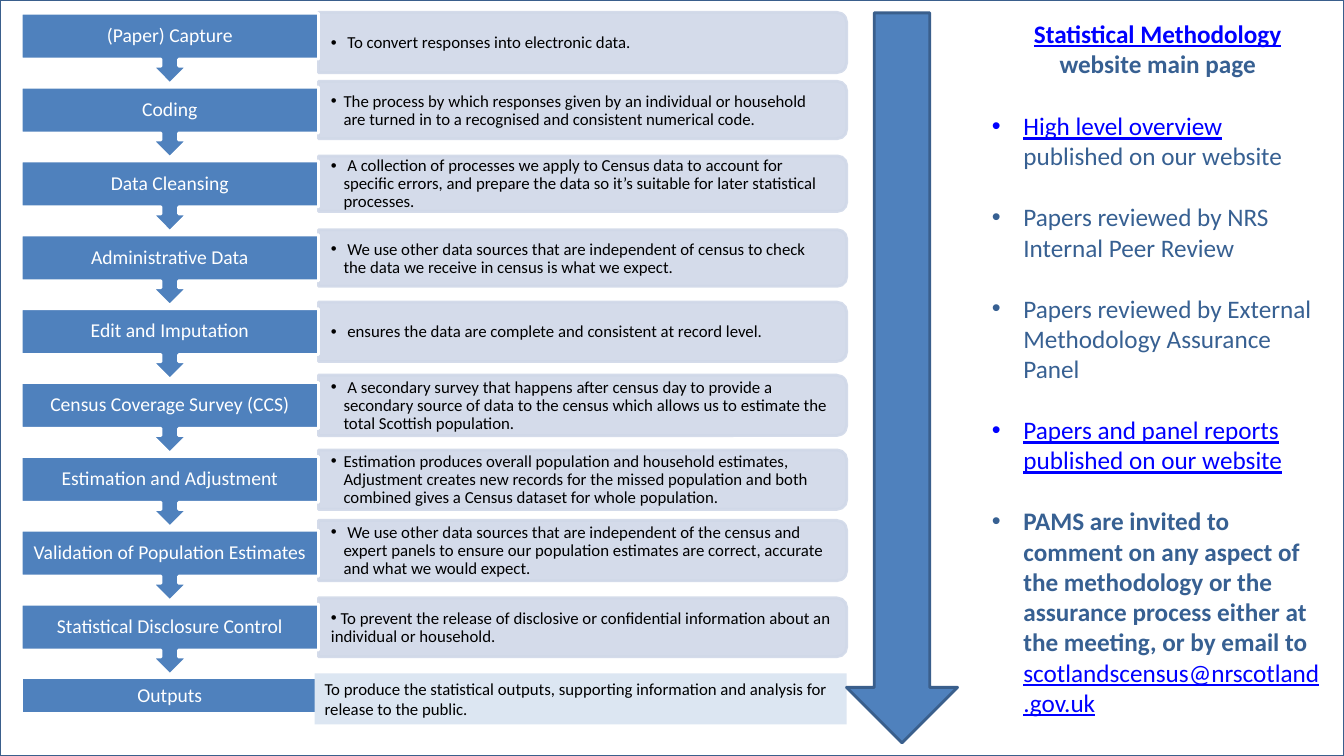
from lxml.etree import SubElement
from pptx import Presentation
from pptx.dml.color import RGBColor
from pptx.enum.shapes import MSO_SHAPE
from pptx.enum.text import MSO_ANCHOR, MSO_AUTO_SIZE, PP_ALIGN
from pptx.oxml.ns import qn
from pptx.util import Pt

BLUE, EDGE, PALE, WHITE = "4F81BD", "3A5F8C", "D0D8E8", "FFFFFF"
BLACK, NAVY, LINK = "000000", "376092", "0000FF"


def ink(fill, code):
    fill.solid()
    fill.fore_color.rgb = RGBColor.from_string(code)


def write(para, text, size, code, bold=False, under=False):
    run = para.add_run()
    run.text = text
    run.font.name = "Calibri"
    run.font.size = Pt(size)
    run.font.bold = bold
    run.font.underline = under
    ink(run.font.fill, code)


# name, panel middle, panel height, description
steps = [
    ("(Paper) Capture", 30.4, 43.2, " To convert responses into electronic data."),
    ("Coding", 78.6, 41, "The process by which responses given by an individual or household are turned in to a recognised and consistent numerical code."),
    ("Data Cleansing", 131.2, 39.6, " A collection of processes we apply to Census data to account for specific errors, and prepare the data so it’s suitable for later statistical processes."),
    ("Administrative Data", 184.3, 40.4, " We use other data sources that are independent of census to check the data we receive in census is what we expect."),
    ("Edit and Imputation", 237, 42.4, " ensures the data are complete and consistent at record level."),
    ("Census Coverage Survey (CCS)", 289.6, 43.2, " A secondary survey that happens after census day to provide a secondary source of data to the census which allows us to estimate the total Scottish population."),
    ("Estimation and Adjustment", 342.6, 42.5, "Estimation produces overall population and household estimates, Adjustment creates new records for the missed population and both combined gives a Census dataset for whole population."),
    ("Validation of Population Estimates", 393.3, 43.2, " We use other data sources that are independent of the census and expert panels to ensure our population estimates are correct, accurate and what we would expect."),
    ("Statistical Disclosure Control", 448.1, 42, " To prevent the release of disclosive or confidential information about an individual or household."),
    ("Outputs", 0, 0, ""),
]
notes = [
    [("High level overview ", LINK, False, True), ("published on our website", NAVY)],
    [("Papers reviewed by NRS Internal Peer Review", NAVY)],
    [("Papers reviewed by External Methodology Assurance Panel", NAVY)],
    [("Papers and panel reports published on our website", LINK, False, True)],
    [("PAMS are invited to comment on any aspect of the methodology or the assurance process either at the meeting, or by email to ", NAVY, True),
     ("scotlandscensus@nrscotland.gov.uk", LINK, False, True)],
]

deck = Presentation()
deck.slide_width, deck.slide_height = Pt(960), Pt(540)
slide = deck.slides.add_slide(deck.slide_layouts[1])
shapes = slide.shapes
title, body = slide.placeholders
lists = []

frame = shapes.add_shape(MSO_SHAPE.RECTANGLE, 0, 0, Pt(960), Pt(540))
ink(frame.fill, WHITE)
ink(frame.line.fill, EDGE)
frame.line.width = Pt(2)
shapes.element.insert(2, frame.element)

left, wide = 227.5, 377.3
for row, (name, mid, high, text) in enumerate(steps):
    if text:
        panel = shapes.add_shape(
            MSO_SHAPE.ROUND_2_SAME_RECTANGLE,
            Pt(left + (wide - high) / 2), Pt(mid - wide / 2), Pt(high), Pt(wide))
        panel.rotation = 90
        ink(panel.fill, PALE)
        ink(panel.line.fill, PALE)
        panel.line.width = Pt(2)
        for tint in panel.element.spPr.iter(qn("a:srgbClr")):
            SubElement(tint, qn("a:alpha"), val="90000")

        box = shapes.add_textbox(Pt(left), Pt(mid - high / 2 + 0.5), Pt(376), Pt(high))
        words = box.text_frame
        words.word_wrap = True
        words.vertical_anchor = MSO_ANCHOR.MIDDLE
        words.margin_left = Pt(8.9)
        words.margin_right = Pt(6 if row == 8 else 8.9)
        words.margin_top = words.margin_bottom = Pt(3)
        para = words.paragraphs[0]
        para.line_spacing = 0.9
        lists.append((para, 0 if row == 8 else 9))
        write(para, text, 12, BLACK)

    kind = MSO_SHAPE.DOWN_ARROW_CALLOUT if text else MSO_SHAPE.RECTANGLE
    step = shapes.add_shape(kind, Pt(15.1), Pt(9.5 + 52.76 * row), Pt(212.4), Pt(50.4 if text else 25.6))
    ink(step.fill, BLUE)
    ink(step.line.fill, WHITE)
    step.line.width = Pt(2)
    words = step.text_frame
    words.word_wrap = True
    words.vertical_anchor = MSO_ANCHOR.MIDDLE
    words.margin_left = words.margin_right = Pt(4)
    words.margin_top = words.margin_bottom = Pt(2)
    para = words.paragraphs[0]
    para.alignment = PP_ALIGN.CENTER
    para.line_spacing = 0.9
    write(para, name, 14, WHITE)

final = shapes.add_shape(MSO_SHAPE.RECTANGLE, Pt(224.8), Pt(481), Pt(380), Pt(36.4))
ink(final.fill, "DCE6F2")
final.line.fill.background()
final.text_frame.word_wrap = True
final.text_frame.vertical_anchor = MSO_ANCHOR.TOP
para = final.text_frame.paragraphs[0]
para.alignment = PP_ALIGN.LEFT
write(para, "To produce the statistical outputs, supporting information and analysis for release to the public.", 12, BLACK)

arrow = shapes.add_shape(MSO_SHAPE.DOWN_ARROW, Pt(604.6), Pt(9.2), Pt(79.4), Pt(521.5))
ink(arrow.fill, BLUE)
ink(arrow.line.fill, EDGE)
arrow.line.width = Pt(2)

for holder, top, high in ((title, 9.4, 52), (body, 75.3, 443)):
    holder.left, holder.top = Pt(701.3), Pt(top)
    holder.width, holder.height = Pt(251.3), Pt(high)
    holder.text_frame.word_wrap = True
    holder.text_frame.auto_size = MSO_AUTO_SIZE.NONE
    holder.text_frame.vertical_anchor = MSO_ANCHOR.TOP

para = title.text_frame.paragraphs[0]
para.alignment = PP_ALIGN.CENTER
write(para, "Statistical Methodology", 18, LINK, True, True)
write(para, " website main page", 18, NAVY, True)

for spot, note in enumerate(notes):
    para = body.text_frame.add_paragraph() if spot else body.text_frame.paragraphs[0]
    para.space_before = Pt(22 if spot else 0)
    lists.append((para, 22.5))
    for text, *look in note:
        write(para, text, 18, *look)

for para, hang in lists:
    props = para._p.get_or_add_pPr()
    props.set("marL", str(Pt(hang)))
    props.set("indent", str(-Pt(hang)))
    SubElement(props, qn("a:buFont"), typeface="Arial")
    SubElement(props, qn("a:buChar"), char="•")

for shape in shapes:
    if not shape.is_placeholder:
        shape.shadow.inherit = False

deck.save("out.pptx")
